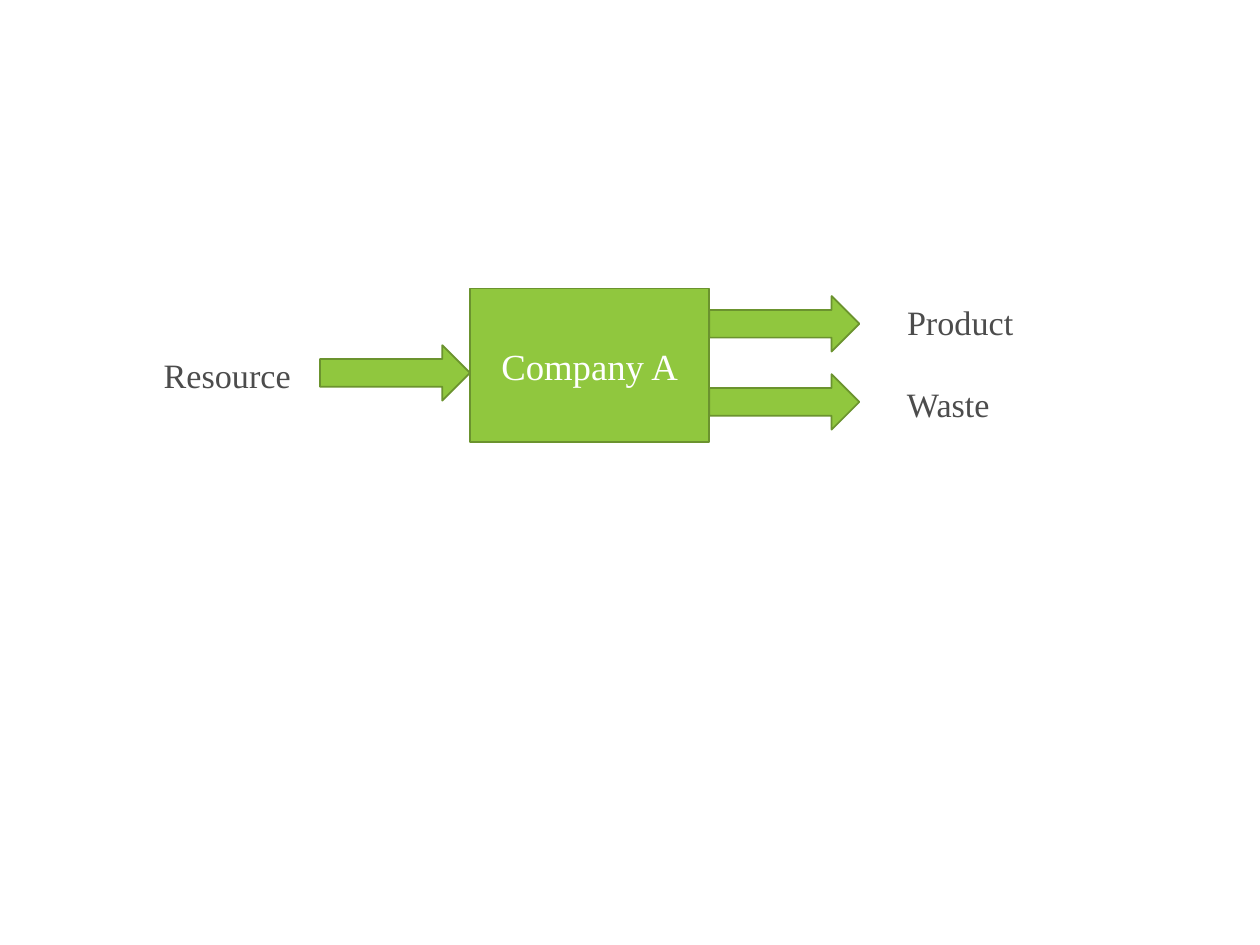
from pptx import Presentation
from pptx.dml.color import RGBColor
from pptx.enum.shapes import MSO_SHAPE
from pptx.enum.text import MSO_ANCHOR, MSO_AUTO_SIZE, PP_ALIGN
from pptx.util import Inches, Pt

FONT = "Times New Roman"
GREEN, DARK_GREEN, GREY, WHITE = "90C73E", "6B932E", "4C4C4C", "FFFFFF"
WIDTH, HEIGHT = 10, 7.5
BOX_X, BOX_Y, BOX_W, BOX_H = 3.73, 2.29, 1.9, 1.22
ARROW_W, ARROW_H = 1.19, 0.44
LABEL_H = 0.43
OUTPUT_X = 7.1


def color(value):
    return RGBColor.from_string(value)


def write(tf, text, size, hue):
    p = tf.paragraphs[0]
    p.text = text
    p.font.name = FONT
    p.font.size = Pt(size)
    p.font.color.rgb = color(hue)
    return p


def add_block(s, kind, x, y, w, h):
    sp = s.shapes.add_shape(kind, Inches(x), Inches(y), Inches(w), Inches(h))
    sp.shadow.inherit = False
    sp.fill.solid()
    sp.fill.fore_color.rgb = color(GREEN)
    sp.line.color.rgb = color(DARK_GREEN)
    sp.line.width = Pt(1)
    return sp


def add_company(s, name):
    sp = add_block(s, MSO_SHAPE.RECTANGLE, BOX_X, BOX_Y, BOX_W, BOX_H)
    sp.text_frame.vertical_anchor = MSO_ANCHOR.MIDDLE
    write(sp.text_frame, name, 21, WHITE).alignment = PP_ALIGN.CENTER


def add_arrow(s, x, y):
    add_block(s, MSO_SHAPE.RIGHT_ARROW, x, y, ARROW_W, ARROW_H)


def add_label(s, text, x, y, w):
    sp = s.shapes.add_textbox(Inches(x), Inches(y), Inches(w), Inches(LABEL_H))
    tf = sp.text_frame
    tf.word_wrap = False
    tf.auto_size = MSO_AUTO_SIZE.SHAPE_TO_FIT_TEXT
    write(tf, text, 19.5, GREY)


def main():
    prs = Presentation()
    prs.slide_width, prs.slide_height = Inches(WIDTH), Inches(HEIGHT)
    s = prs.slides.add_slide(prs.slide_layouts[6])

    add_company(s, "Company A")
    add_arrow(s, BOX_X - ARROW_W, 2.74)
    for y in (2.35, 2.97):
        add_arrow(s, BOX_X + BOX_W, y)

    add_label(s, "Resource", 1.2, 2.76, 1.22)
    for text, y, w in (("Product", 2.34, 1.05), ("Waste", 2.99, 0.86)):
        add_label(s, text, OUTPUT_X, y, w)

    prs.save("out.pptx")


if __name__ == "__main__":
    main()
